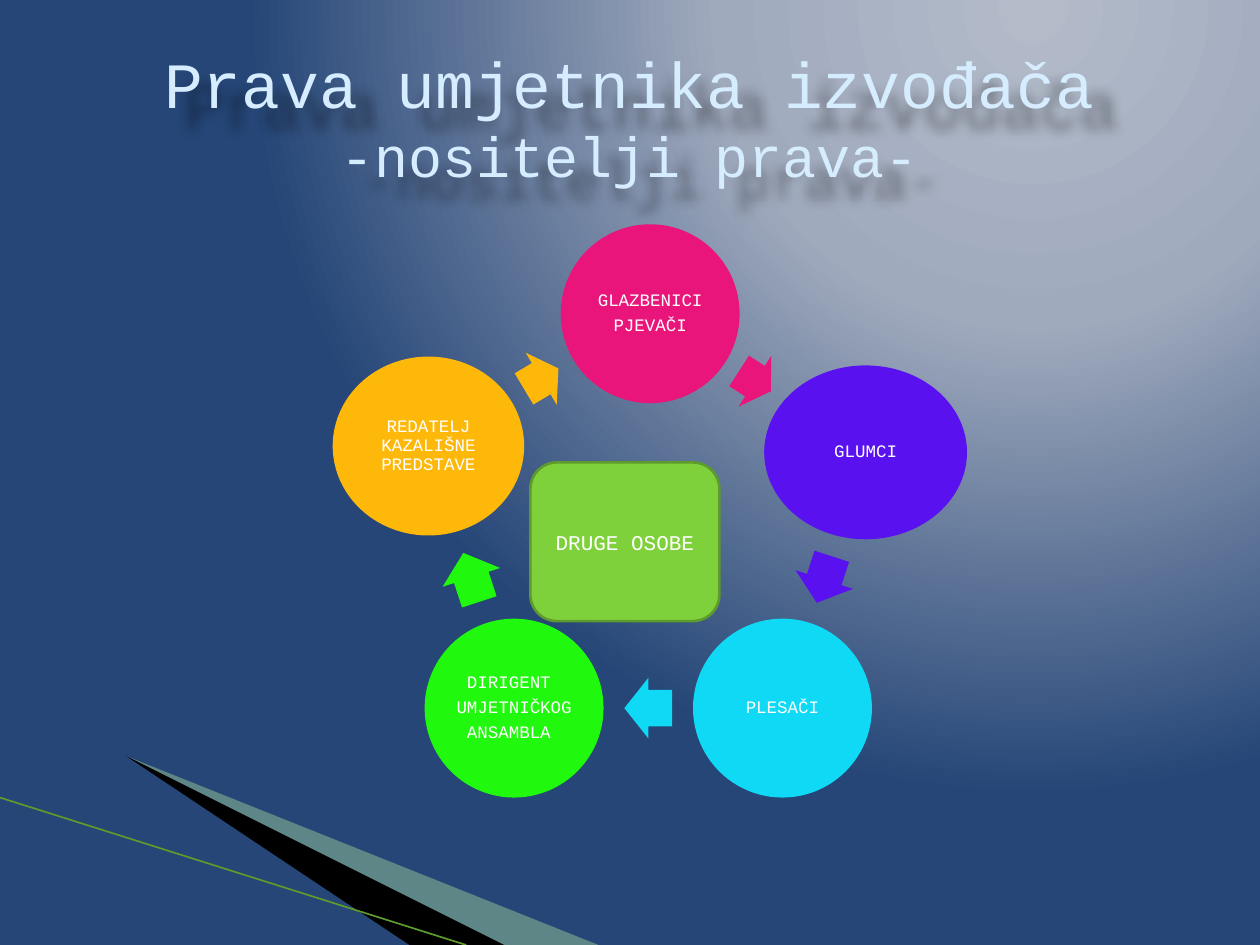
from dataclasses import dataclass
from math import atan2, cos, degrees, hypot, sin

from lxml import etree
from pptx import Presentation
from pptx.dml.color import RGBColor
from pptx.enum.shapes import MSO_CONNECTOR as CONN, MSO_SHAPE as SHAPE
from pptx.enum.text import MSO_ANCHOR as ANCHOR, PP_ALIGN as ALIGN
from pptx.oxml import parse_xml
from pptx.oxml.ns import nsdecls, qn
from pptx.util import Inches, Pt


@dataclass(frozen=True)
class Theme:
    """Colours, font and type sizes of the slide."""
    font: str = "Courier New"
    title: str = "D6ECFF"
    text: str = "FFFFFF"
    hub: str = "7FD13B"
    edge: str = "5E9B2C"
    pale: str = "B8E7A1"
    black: str = "000000"
    glow: tuple = ((0, "B3BBC9"), (40, "A0AABD"), (100, "254677"))
    title_pt: float = 36.9
    subtitle_pt: float = 32.4
    hub_pt: int = 12
    node_pt: int = 10


THEME = Theme()
NODES = [
    (2.52, 0.71, 1.42, 1.42, "EA157A", ["GLAZBENICI", "PJEVAČI"]),
    (4.23, 1.81, 1.61, 1.38, "5912EF", ["GLUMCI"]),
    (3.57, 3.84, 1.42, 1.42, "0FD9F4", ["PLESAČI"]),
    (1.44, 3.84, 1.42, 1.42, "20F90D", ["DIRIGENT ", "UMJETNIČKOG", "ANSAMBLA "]),
    (0.76, 1.76, 1.52, 1.42, "FEB80A", ["REDATELJ KAZALIŠNE PREDSTAVE"]),
]


def rgb(color):
    """Turn a hex string into a colour."""
    return RGBColor.from_string(color)


def style_font(font, size, color):
    """Set typeface, size and colour."""
    font.name, font.size = THEME.font, Pt(size)
    font.color.rgb = rgb(color)


def paint(sp, color, line=None, width=1.5):
    """Give a shape a flat fill and an optional outline, without shadow."""
    sp.shadow.inherit = False
    sp.fill.solid()
    sp.fill.fore_color.rgb = rgb(color)
    if line:
        sp.line.color.rgb = rgb(line)
        sp.line.width = Pt(width)
    else:
        sp.line.fill.background()


def add_shape(slide, kind, cx, cy, w, h, color, line=None):
    """Add a painted preset shape around a centre point."""
    sp = slide.shapes.add_shape(kind, Inches(cx - w / 2), Inches(cy - h / 2),
                                Inches(w), Inches(h))
    paint(sp, color, line)
    return sp


def write(sp, lines, size, inset=0.1):
    """Write centred paragraphs inside a shape."""
    tf = sp.text_frame
    tf.word_wrap, tf.vertical_anchor = True, ANCHOR.MIDDLE
    tf.margin_left = tf.margin_right = Inches(inset)
    tf.margin_top = tf.margin_bottom = Inches(min(inset, 0.05))
    tf.text = "\n".join(lines)
    for p in tf.paragraphs:
        p.alignment = ALIGN.CENTER
        style_font(p.font, size, THEME.text)
    return tf


def add_background(slide):
    """Fill the background with a glow from the upper right."""
    fill = slide.background.fill
    fill.solid()
    stops = "".join(f'<a:gs pos="{pos * 1000}"><a:srgbClr val="{color}"/></a:gs>'
                    for pos, color in THEME.glow)
    grad = parse_xml(f'<a:gradFill {nsdecls("a")} rotWithShape="1"><a:gsLst>{stops}</a:gsLst>'
                     '<a:path path="circle"><a:fillToRect l="65000" t="0" r="0" b="98000"/>'
                     '</a:path></a:gradFill>')
    solid = next(slide.element.iter(qn("a:solidFill")))
    solid.getparent().replace(solid, grad)


def add_wedge(slide, x, y, points, color):
    """Draw a closed outline relative to a corner point."""
    (x0, y0), *rest = [(x + dx, y + dy) for dx, dy in points]
    builder = slide.shapes.build_freeform(x0, y0, scale=Inches(1))
    builder.add_line_segments(rest, close=True)
    sp = builder.convert_to_shape()
    paint(sp, color)
    return sp


def add_corner(slide, x, y, w, h):
    """Draw the wedges and the thin line in the lower left corner."""
    bottom = h - 0.17
    pale = add_wedge(slide, x + 0.55, y + 0.17,
                     [(0, 0), (w - 0.55, bottom), (4.01, bottom)], THEME.pale)
    alpha = etree.SubElement(next(pale.element.spPr.iter(qn("a:srgbClr"))), qn("a:alpha"))
    alpha.set("val", "40000")
    add_wedge(slide, x + 0.53, y + 0.16,
              [(0, 0), (4.04, bottom + 0.01), (3.19, bottom + 0.01)], THEME.black)
    line = slide.shapes.add_connector(CONN.STRAIGHT, Inches(x), Inches(y),
                                      Inches(x + 3.7), Inches(y + h))
    line.line.color.rgb = rgb(THEME.edge)
    line.line.width = Pt(0.95)
    etree.SubElement(line.element.spPr, qn("a:effectLst"))


def add_title(slide, x, y, w, h):
    """Write the two-line title with a soft shadow."""
    box = slide.shapes.add_textbox(Inches(x), Inches(y), Inches(w), Inches(h))
    tf = box.text_frame
    tf.word_wrap, tf.vertical_anchor = True, ANCHOR.MIDDLE
    p = tf.paragraphs[0]
    p.alignment = ALIGN.CENTER
    for text, size in (("Prava umjetnika izvođača", THEME.title_pt),
                       ("-nositelji prava-", THEME.subtitle_pt)):
        if p.runs:
            p.add_line_break()
        r = p.add_run()
        r.text = text
        style_font(r.font, size, THEME.title)
    box.element.spPr.append(parse_xml(
        f'<a:effectLst {nsdecls("a")}><a:outerShdw blurRad="{Inches(0.1)}" '
        f'dist="{Inches(0.22)}" dir="2700000" algn="tl" rotWithShape="0">'
        f'<a:srgbClr val="{THEME.black}"><a:alpha val="40000"/></a:srgbClr>'
        '</a:outerShdw></a:effectLst>'))


def add_arrow(slide, x, y, start, end):
    """Centre an arrow in the gap between two neighbouring ellipses."""
    dx, dy = end[0] - start[0], end[1] - start[1]
    angle, dist = atan2(dy, dx), hypot(dx, dy)
    near, far = (1 / hypot(2 * cos(angle) / node[2], 2 * sin(angle) / node[3])
                 for node in (start, end))
    mid = (dist + near - far) / 2
    sp = add_shape(slide, SHAPE.RIGHT_ARROW, x + start[0] + mid * cos(angle),
                   y + start[1] + mid * sin(angle),
                   0.535 * (dist - near - far), 0.48, start[4])
    sp.adjustments[0], sp.adjustments[1] = 0.6, 0.5
    sp.rotation = degrees(angle) % 360


def add_cycle(slide, x, y):
    """Draw the hub and the ring of rights holders."""
    hub = add_shape(slide, SHAPE.ROUNDED_RECTANGLE, x + 2.32, y + 2.52, 1.5, 1.26,
                    THEME.hub, THEME.edge)
    write(hub, ["DRUGE OSOBE"], THEME.hub_pt)
    for node, following in zip(NODES, NODES[1:] + NODES[:1]):
        cx, cy, w, h, color, lines = node
        sp = add_shape(slide, SHAPE.OVAL, x + cx, y + cy, w, h, color)
        for p in write(sp, lines, THEME.node_pt, 0.01).paragraphs:
            p.line_spacing, p.space_after = 0.9, Pt(3.5)
        add_arrow(slide, x, y, node, following)


def main():
    """Build and save the slide."""
    prs = Presentation()
    prs.slide_width, prs.slide_height = Inches(10), Inches(7.5)
    slide = prs.slides.add_slide(prs.slide_layouts[6])
    add_background(slide)
    add_corner(slide, 0, 6.33, 5.9, 1.17)
    add_title(slide, 0.5, 0.3, 9, 1.25)
    add_cycle(slide, 2.64, 1.78)
    prs.save("out.pptx")


if __name__ == "__main__":
    main()
